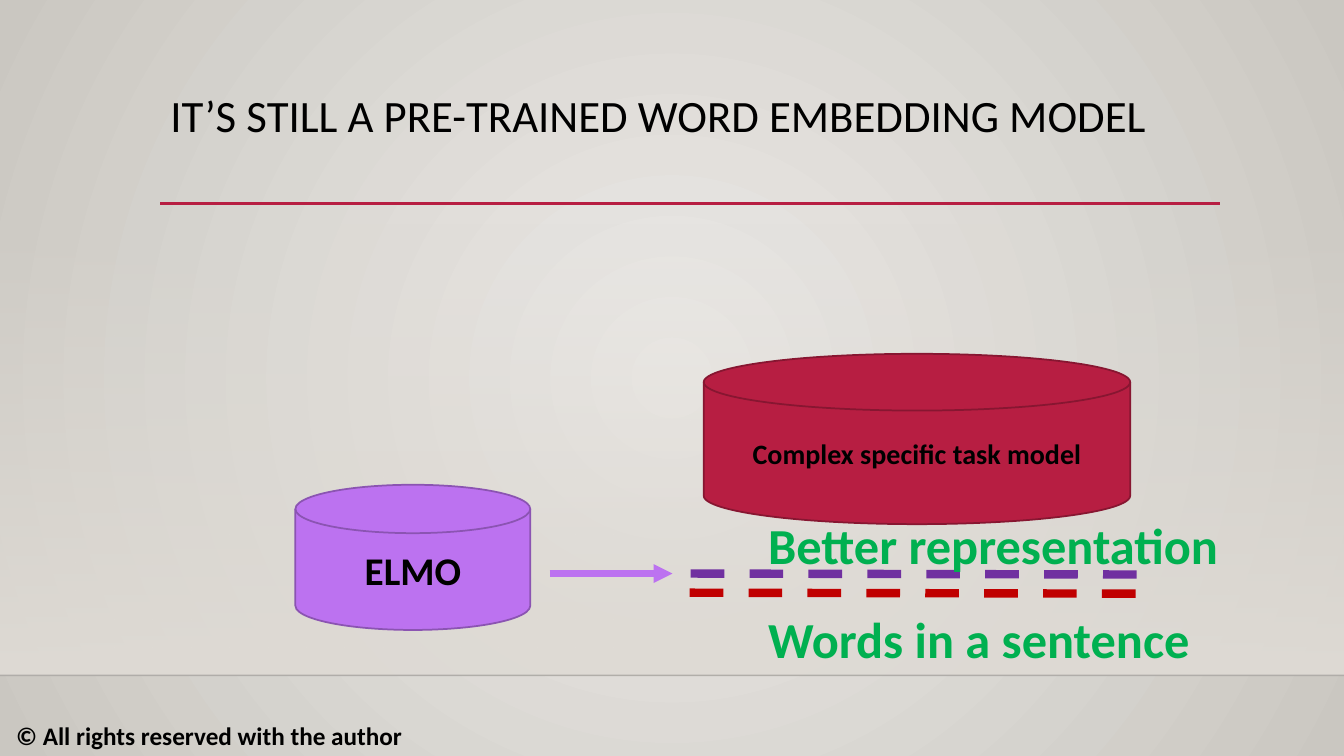
from dataclasses import dataclass
from typing import Optional

from lxml import etree
from pptx import Presentation
from pptx.dml.color import RGBColor
from pptx.enum.dml import MSO_LINE
from pptx.enum.shapes import MSO_CONNECTOR, MSO_SHAPE
from pptx.enum.text import MSO_ANCHOR, MSO_AUTO_SIZE, PP_ALIGN
from pptx.oxml.ns import qn
from pptx.util import Inches, Pt

DISK = MSO_SHAPE.FLOWCHART_MAGNETIC_DISK
RECTANGLE = MSO_SHAPE.RECTANGLE
STRAIGHT = MSO_CONNECTOR.STRAIGHT
DASH = MSO_LINE.DASH
TOP = MSO_ANCHOR.TOP
MIDDLE = MSO_ANCHOR.MIDDLE
LEFT = PP_ALIGN.LEFT
CENTER = PP_ALIGN.CENTER
FIXED_SIZE = MSO_AUTO_SIZE.NONE
FIT_SHAPE = MSO_AUTO_SIZE.SHAPE_TO_FIT_TEXT

BLACK = RGBColor(0x00, 0x00, 0x00)
NEAR_BLACK = RGBColor(0x00, 0x00, 0x01)
PALE_STONE = RGBColor(0xEC, 0xEA, 0xE7)
DARK_STONE = RGBColor(0xCA, 0xC7, 0xC1)
STONE = RGBColor(0xDF, 0xDB, 0xD5)
CRIMSON = RGBColor(0xB7, 0x1E, 0x42)
DARK_CRIMSON = RGBColor(0x87, 0x16, 0x31)
LILAC = RGBColor(0xBC, 0x72, 0xF0)
DARK_LILAC = RGBColor(0x8B, 0x54, 0xB2)
RED = RGBColor(0xC0, 0x00, 0x00)
PURPLE = RGBColor(0x70, 0x30, 0xA0)
GREEN = RGBColor(0x00, 0xB0, 0x50)

FONT = "Calibri"
SLIDE_WIDTH = 13.33
FLOOR_TOP = 6.7


@dataclass(frozen=True)
class Line:
    start: tuple[float, float]
    end: tuple[float, float]
    color: RGBColor
    width: float
    dash: Optional[MSO_LINE] = None
    arrow: bool = False
    opacity: int = 100


@dataclass(frozen=True)
class Model:
    text: str
    place: tuple[float, float, float, float]
    fill: RGBColor
    outline: RGBColor
    size: int


@dataclass(frozen=True)
class Label:
    text: str
    place: tuple[float, float, float, float]
    size: int
    color: RGBColor
    wrap: bool = True
    inset: float = 0.1


FLOOR_LINE = Line((0, FLOOR_TOP), (SLIDE_WIDTH, FLOOR_TOP), NEAR_BLACK, 1, opacity=20)
TITLE_RULE = Line((1.59, 2.02), (12.1, 2.02), CRIMSON, 2.5)
WORDS_LINE = Line((6.84, 5.88), (11.46, 5.89), RED, 6, dash=DASH)
VECTORS_LINE = Line((6.85, 5.69), (11.46, 5.7), PURPLE, 6, dash=DASH)
ELMO_ARROW = Line((5.45, 5.69), (6.67, 5.69), LILAC, 4.5, arrow=True)

TASK_MODEL = Model("Complex specific task model", (6.98, 3.51, 4.23, 1.69),
                   CRIMSON, DARK_CRIMSON, 20)
ELMO_MODEL = Model("ELMO", (2.93, 4.81, 2.33, 1.44), LILAC, DARK_LILAC, 28)

LABELS = (
    Label("Words in a sentence", (7.52, 5.98, 5.58, 0.71), 36, GREEN),
    Label("Better representation", (7.52, 5.05, 5.58, 0.71), 36, GREEN),
    Label("© All rights reserved with the author", (0, 7.1, 4.58, 0.4), 18, BLACK,
          wrap=False, inset=0.16),
)


def add_span(para, text: str, size: int, color: RGBColor, bold: bool) -> None:
    span = para.add_run()
    span.text = text
    span.font.name = FONT
    span.font.size = Pt(size)
    span.font.bold = bold
    span.font.color.rgb = color


def set_opacity(color_element, percent: int) -> None:
    etree.SubElement(color_element, qn("a:alpha"), val=str(percent * 1000))


def set_gradient(fill, first: RGBColor, last: RGBColor) -> None:
    fill.gradient()
    for stop, color in zip(fill.gradient_stops, (first, last)):
        stop.color.rgb = color


def paint_background(page) -> None:
    fill = page.background.fill
    set_gradient(fill, PALE_STONE, DARK_STONE)
    gradient = next(page.element.iter(qn("a:gradFill")))
    gradient.remove(gradient.find(qn("a:lin")))
    circle = etree.SubElement(gradient, qn("a:path"), path="circle")
    etree.SubElement(circle, qn("a:fillToRect"), l="50000", t="50000", r="50000", b="50000")


def add_wall(page) -> None:
    wall = page.shapes.add_shape(RECTANGLE, 0, Inches(2.21), Inches(SLIDE_WIDTH), Inches(4.49))
    wall.shadow.inherit = False
    wall.line.fill.background()
    set_gradient(wall.fill, STONE, STONE)
    wall.fill.gradient_angle = 270
    set_opacity(next(wall.element.iter(qn("a:srgbClr"))), 0)


def add_line(page, line: Line) -> None:
    points = [Inches(value) for value in line.start + line.end]
    connector = page.shapes.add_connector(STRAIGHT, *points)
    connector.line.color.rgb = line.color
    connector.line.width = Pt(line.width)
    if line.dash is not None:
        connector.line.dash_style = line.dash
    properties = connector.element.spPr
    if line.opacity < 100:
        set_opacity(next(properties.iter(qn("a:srgbClr"))), line.opacity)
    if line.arrow:
        etree.SubElement(properties.find(qn("a:ln")), qn("a:tailEnd"), type="triangle")
    etree.SubElement(properties, qn("a:effectLst"))


def add_model(page, model: Model) -> None:
    disk = page.shapes.add_shape(DISK, *map(Inches, model.place))
    disk.shadow.inherit = False
    disk.fill.solid()
    disk.fill.fore_color.rgb = model.fill
    disk.line.color.rgb = model.outline
    disk.line.width = Pt(1.25)
    disk.text_frame.word_wrap = True
    disk.text_frame.vertical_anchor = MIDDLE
    para = disk.text_frame.paragraphs[0]
    para.alignment = CENTER
    add_span(para, model.text, model.size, BLACK, True)


def add_label(page, label: Label) -> None:
    box = page.shapes.add_textbox(*map(Inches, label.place))
    frame = box.text_frame
    frame.word_wrap = label.wrap
    frame.auto_size = FIT_SHAPE
    frame.margin_left = Inches(label.inset)
    add_span(frame.paragraphs[0], label.text, label.size, label.color, True)


def fill_title(page, text: str) -> None:
    title = page.shapes.title
    title.left, title.top, title.width, title.height = map(Inches, (1.59, 0.88, 10.5, 1.15))
    frame = title.text_frame
    frame.word_wrap = True
    frame.auto_size = FIXED_SIZE
    frame.vertical_anchor = TOP
    para = frame.paragraphs[0]
    para.alignment = LEFT
    para.line_spacing = 0.9
    add_span(para, text, 32, BLACK, False)


def main() -> None:
    deck = Presentation()
    deck.slide_width = Inches(SLIDE_WIDTH)
    deck.slide_height = Inches(7.5)
    page = deck.slides.add_slide(deck.slide_layouts.get_by_name("Title Only"))
    paint_background(page)
    add_wall(page)
    add_line(page, FLOOR_LINE)
    add_line(page, TITLE_RULE)
    fill_title(page, "IT’S STILL A PRE-TRAINED WORD EMBEDDING MODEL")
    add_model(page, TASK_MODEL)
    add_line(page, WORDS_LINE)
    add_line(page, VECTORS_LINE)
    add_model(page, ELMO_MODEL)
    add_line(page, ELMO_ARROW)
    for label in LABELS:
        add_label(page, label)
    deck.save("out.pptx")


if __name__ == "__main__":
    main()
